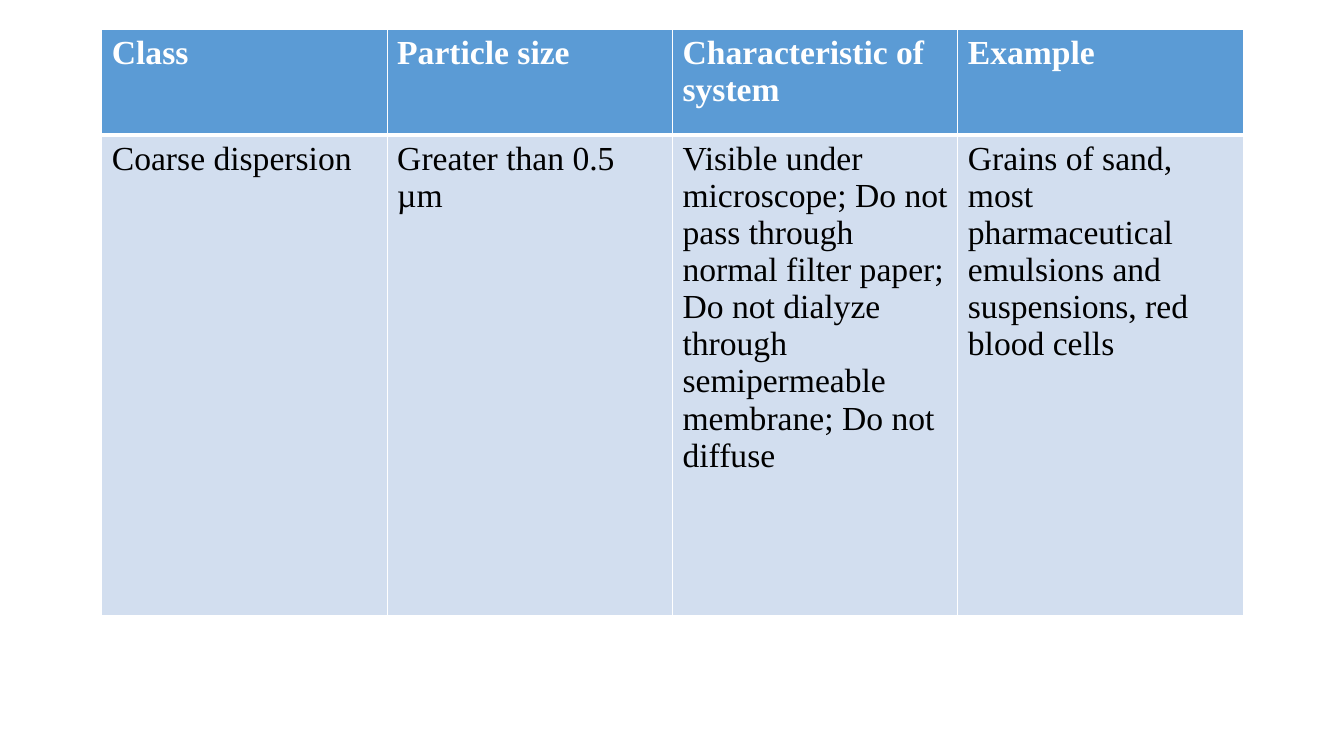
"""Build a slide with a table describing the coarse dispersion class."""
from lxml import etree
from pptx import Presentation
from pptx.dml.color import RGBColor
from pptx.oxml.ns import qn
from pptx.util import Inches, Pt

BLANK_LAYOUT = 6
FONT = "Times New Roman"
COLORS = {"header": "5B9BD5", "body": "D2DEEF", "white": "FFFFFF", "black": "000000"}
COLUMN_WIDTH = 2.83
ROW_HEIGHTS = [1.05, 4.77]
ROWS = [
    ["Class", "Particle size", "Characteristic of system", "Example"],
    [
        "Coarse dispersion",
        "Greater than 0.5 µm",
        "Visible under microscope; Do not pass through normal filter paper; "
        "Do not dialyze through semipermeable membrane; Do not diffuse",
        "Grains of sand, most pharmaceutical emulsions and suspensions, red blood cells",
    ],
]


def set_borders(cell, widths):
    """Give a cell white borders, with widths in points by side."""
    properties = cell._tc.get_or_add_tcPr()
    for position, (side, width) in enumerate(widths.items()):
        line = etree.Element(qn(f"a:ln{side}"), w=str(Pt(width)))
        fill = etree.SubElement(line, qn("a:solidFill"))
        etree.SubElement(fill, qn("a:srgbClr"), val=COLORS["white"])
        properties.insert(position, line)


presentation = Presentation()
presentation.slide_width = Inches(13.33)
presentation.slide_height = Inches(7.5)
slide = presentation.slides.add_slide(presentation.slide_layouts[BLANK_LAYOUT])

table = slide.shapes.add_table(
    len(ROWS), len(ROWS[0]), Inches(1.01), Inches(0.29),
    Inches(COLUMN_WIDTH * len(ROWS[0])), Inches(sum(ROW_HEIGHTS)),
).table
for column in table.columns:
    column.width = Inches(COLUMN_WIDTH)

for row_index, texts in enumerate(ROWS):
    table.rows[row_index].height = Inches(ROW_HEIGHTS[row_index])
    is_header = row_index == 0
    for column_index, text in enumerate(texts):
        cell = table.cell(row_index, column_index)
        cell.fill.solid()
        cell.fill.fore_color.rgb = RGBColor.from_string(COLORS["header" if is_header else "body"])
        set_borders(cell, {"L": 1, "R": 1, "T": 1 if is_header else 3, "B": 3 if is_header else 1})
        run = cell.text_frame.paragraphs[0].add_run()
        run.text = text
        run.font.name = FONT
        run.font.size = Pt(24)
        run.font.bold = is_header
        run.font.color.rgb = RGBColor.from_string(COLORS["white" if is_header else "black"])

presentation.save("out.pptx")
